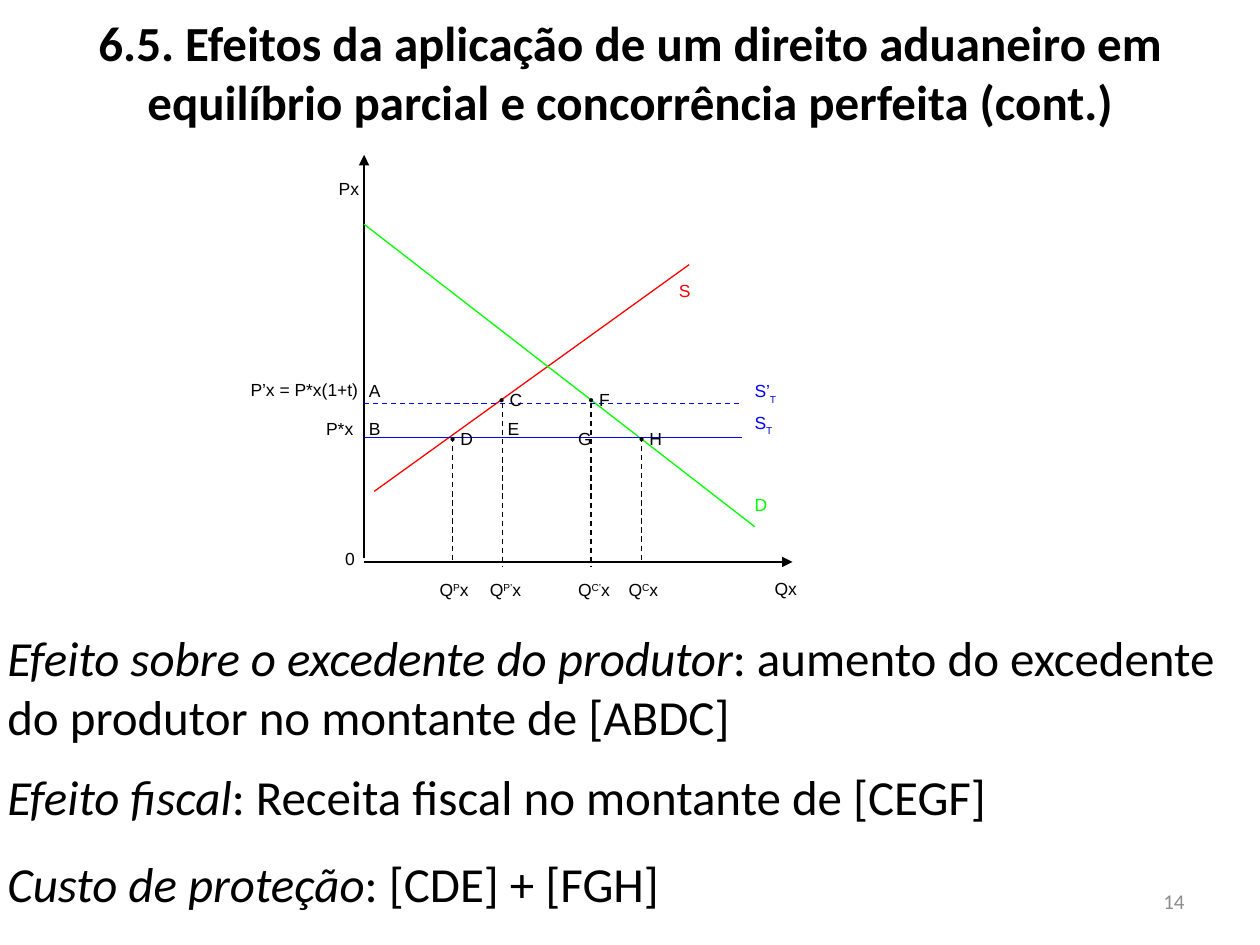
import pptx
import pptx.util
import pptx.dml.color
import pptx.enum.dml
import pptx.enum.shapes
import pptx.enum.text
import pptx.oxml
import pptx.oxml.ns

Inches, Pt = pptx.util.Inches, pptx.util.Pt
RGBColor = pptx.dml.color.RGBColor
ALIGN = pptx.enum.text.PP_ALIGN
ANCHOR = pptx.enum.text.MSO_ANCHOR
BLACK = RGBColor(0, 0, 0)
GRAY = RGBColor(0x8C, 0x8C, 0x8C)
RED = RGBColor(0xFF, 0, 0)
GREEN = RGBColor(0, 0xFF, 0)
BLUE = RGBColor(0, 0, 0xFF)

deck = pptx.Presentation()
deck.slide_width, deck.slide_height = Inches(10), Inches(7.5)
slide = deck.slides.add_slide(deck.slide_layouts[6])


def add_text(parts, left, top, width=1, height=0.3, size=10, face="Arial",
             color=BLACK, anchor=ANCHOR.TOP, align=ALIGN.LEFT, grow=False):
    """Add a one-paragraph box and return the paragraph and its runs."""
    box = slide.shapes.add_textbox(Inches(left), Inches(top), Inches(width), Inches(height))
    frame = box.text_frame
    frame.word_wrap = True
    frame.vertical_anchor = anchor
    if grow:
        frame.auto_size = pptx.enum.text.MSO_AUTO_SIZE.SHAPE_TO_FIT_TEXT
    para = frame.paragraphs[0]
    para.alignment = align
    para.font.size, para.font.name = Pt(size), face
    para.font.color.rgb = color
    runs = []
    for part in parts:
        run = para.add_run()
        run.text = part
        runs.append(run)
    return para, runs


def add_line(x1, y1, x2, y2, color=BLACK, dash=False, arrow=False):
    line = slide.shapes.add_connector(
        pptx.enum.shapes.MSO_CONNECTOR.STRAIGHT,
        Inches(x1), Inches(y1), Inches(x2), Inches(y2))
    line.line.width = Pt(0.75)
    line.line.color.rgb = color
    if dash:
        line.line.dash_style = pptx.enum.dml.MSO_LINE.DASH
    props = line._element.spPr
    if arrow:
        tail = pptx.oxml.parse_xml(
            f'<a:tailEnd {pptx.oxml.ns.nsdecls("a")} type="triangle"/>')
        line.line._get_or_add_ln().append(tail)
    props.append(pptx.oxml.parse_xml(f'<a:effectLst {pptx.oxml.ns.nsdecls("a")}/>'))


# Title, effects and page number
para, runs = add_text(
    ["6.5. Efeitos da aplicação de um direito aduaneiro em equilíbrio parcial "
     "e concorrência perfeita (cont.)"],
    0, 0.05, 10, 1.04, 28, "Calibri", align=ALIGN.CENTER, grow=True)
para.font.bold = True

for name, detail, top, height in [
    ("Efeito sobre o excedente do produtor",
     ": aumento do excedente do produtor no montante de [ABDC]", 4.93, 1.04),
    ("Efeito fiscal", ": Receita fiscal no montante de [CEGF]", 6.03, 0.57),
    ("Custo de proteção", ": [CDE] + [FGH]", 6.72, 0.57),
]:
    para, runs = add_text([name, detail], -0.04, top, 10, height, 28, "Calibri",
                          anchor=ANCHOR.MIDDLE, grow=True)
    runs[0].font.italic = True

add_text(["14"], 7.17, 6.95, 2.33, 0.4, 12, "Calibri", GRAY, ANCHOR.MIDDLE, ALIGN.RIGHT)

# Axes, curves and price levels
AXIS, WORLD, TARIFF = 2.89, 3.47, 3.2
add_line(AXIS, 4.43, AXIS, 1.23, arrow=True)
add_line(AXIS, 4.46, 6.29, 4.46, arrow=True)
add_line(2.97, 3.9, 5.47, 2.1, RED)
add_line(AXIS, 1.78, 5.99, 4.18, GREEN)
add_line(AXIS, WORLD, 5.89, WORLD, BLUE)
add_line(AXIS, TARIFF, 5.89, TARIFF, BLUE, dash=True)
for x, price, foot in [(5.09, WORLD, 4.47), (4.69, TARIFF, 4.5),
                       (3.59, WORLD, 4.47), (3.99, TARIFF, 4.5)]:
    add_line(x, price, x, foot, dash=True)

# Marked points: dot and letter
for letter, left, top, indent in [("F", 4.49, 3.04, 0.08), ("H", 4.89, 3.35, 0.08),
                                  ("C", 3.74, 3.04, 0.12), ("D", 3.39, 3.35, 0.08)]:
    para, runs = add_text(["•", " " + letter], left, top)
    para._p.get_or_add_pPr().set("marL", str(Inches(indent)))
    runs[0].font.name = "Times New Roman"

# Plain labels
for label, left, top, width, color in [
    ("G", 4.49, 3.35, 1, BLACK),
    ("E", 3.93, 3.27, 1, BLACK),
    ("A", 2.83, 2.97, 0.5, BLACK),
    ("B", 2.83, 3.27, 1, BLACK),
    ("Qx", 6.05, 4.54, 1, BLACK),
    ("0", 2.64, 4.3, 1, BLACK),
    ("Px", 2.59, 1.36, 1, BLACK),
    ("S", 5.29, 2.17, 1, RED),
    ("D", 5.89, 3.87, 1, GREEN),
    ("P’x = P*x(1+t)", 1.89, 2.96, 1.2, BLACK),
    ("P*x", 2.49, 3.27, 1, BLACK),
]:
    add_text([label], left, top, width, color=color)

# Labels whose second part is raised or lowered
for parts, left, top, color, shift in [
    (["Q", "C", "x"], 4.89, 4.55, BLACK, 30),
    (["Q", "C’", "x"], 4.49, 4.55, BLACK, 30),
    (["Q", "P’", "x"], 3.79, 4.55, BLACK, 30),
    (["Q", "P", "x"], 3.39, 4.55, BLACK, 30),
    (["S", "T"], 5.89, 3.22, BLUE, -30),
    (["S’", "T"], 5.89, 2.97, BLUE, -30),
]:
    para, runs = add_text(parts, left, top, color=color)
    runs[1]._r.get_or_add_rPr().set("baseline", str(shift * 1000))

deck.save("out.pptx")
